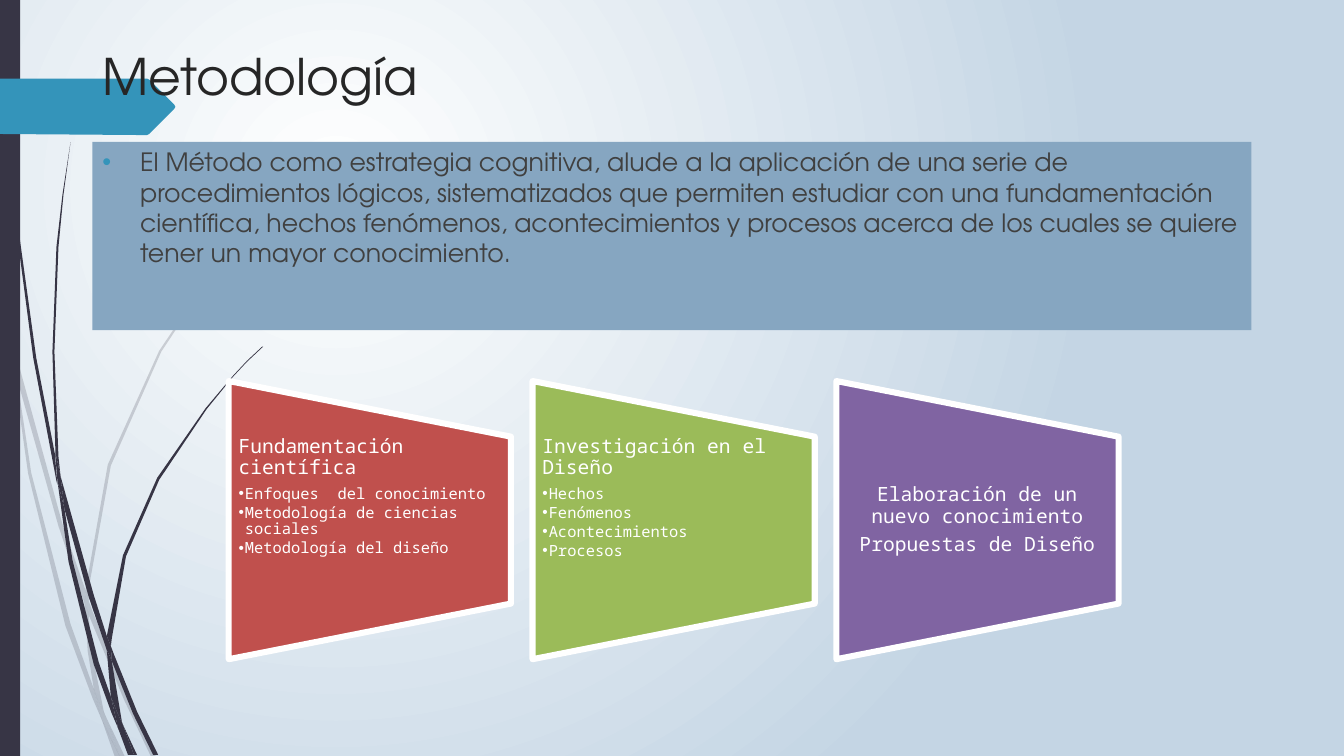
from pptx import Presentation
from pptx.dml.color import RGBColor
from pptx.enum.shapes import MSO_SHAPE
from pptx.enum.text import MSO_ANCHOR, PP_ALIGN
from pptx.oxml import parse_xml
from pptx.oxml.ns import nsdecls, qn
from pptx.oxml.xmlchemy import OxmlElement
from pptx.util import Pt

WHITE = RGBColor(0xFF, 0xFF, 0xFF)
SKY = RGBColor(0xC4, 0xD5, 0xE4)
NIGHT = RGBColor(0x37, 0x35, 0x45)
TEAL = RGBColor(0x34, 0x94, 0xBA)
PANEL = RGBColor(0x86, 0xA6, 0xC1)
TITLE_INK = RGBColor(0x26, 0x26, 0x26)
BODY_INK = RGBColor(0x40, 0x40, 0x40)
RED = RGBColor(0xC0, 0x50, 0x4D)
GREEN = RGBColor(0x9B, 0xBB, 0x59)
PURPLE = RGBColor(0x80, 0x64, 0xA2)

DISPLAY = "TeX Gyre Adventor"
MONO = "Noto Sans Mono"
OUTLINE_UNIT = Pt(0.72)

PALE_BLADES = [
    [(11, 350), (9, 322), (0, 282), (0, 299), (10, 344)],
    [(58, 522), (84, 599), (85, 586), (62, 520), (14, 345), (17, 376)],
    [(92, 607), (88, 596), (88, 610), (123, 694), (150, 751), (155, 751), (127, 692)],
    [(119, 751), (124, 751), (105, 711)],
    [(93, 683), (70, 619), (31, 469), (17, 376), (11, 350), (28, 470), (65, 621), (92, 693), (101, 714), (99, 707)],
    [(84, 599), (87, 646), (93, 683), (96, 692), (105, 711), (103, 706), (91, 646), (88, 610), (88, 608)],
    [(88, 584), (110, 462), (160, 349), (229, 245), (268, 198), (290, 175), (312, 154), (312, 153), (289, 175),
     (268, 197), (228, 244), (158, 348), (107, 461), (85, 584), (85, 586), (88, 596)],
    [(101, 714), (114, 751), (119, 751)],
    [(88, 608), (88, 610), (88, 596), (85, 586), (84, 599)],
    [(96, 692), (93, 683), (99, 707), (101, 714), (119, 751), (105, 711)],
]
DARK_BLADES = [
    [(7, 110), (17, 233), (33, 355), (56, 477), (57, 481), (55, 457), (55, 453), (36, 355), (19, 232), (8, 109),
     (5, 48), (4, 0), (3, 0), (4, 48)],
    [(88, 592), (106, 645), (106, 633), (106, 631), (93, 590), (60, 472), (64, 505)],
    [(113, 649), (110, 641), (111, 656), (132, 708), (152, 749), (157, 749), (136, 706)],
    [(110, 691), (98, 657), (72, 556), (64, 505), (57, 477), (68, 557), (93, 659), (111, 708), (117, 722), (116, 717)],
    [(60, 472), (58, 453), (54, 349), (58, 245), (63, 193), (70, 141), (62, 193), (56, 245), (52, 349), (55, 449)],
    [(133, 749), (136, 749), (122, 719)],
    [(57, 477), (64, 505), (60, 472), (55, 449), (55, 453)],
    [(111, 633), (125, 552), (158, 476), (205, 406), (231, 374), (245, 359), (261, 344), (260, 344), (245, 358),
     (231, 373), (204, 405), (156, 474), (122, 551), (106, 631), (110, 641)],
    [(117, 722), (127, 749), (131, 749)],
    [(106, 645), (110, 691), (116, 706), (122, 719), (121, 716), (111, 656), (109, 651)],
    [(106, 645), (109, 651), (111, 656), (110, 641), (106, 631), (106, 633)],
    [(116, 706), (110, 691), (116, 717), (117, 722), (130, 749), (133, 749), (122, 719)],
]
TAG = [(173, 108), (148, 133), (146, 134), (136, 134), (0, 133), (0, 78), (146, 78), (148, 79), (173, 104), (174, 106)]

DEFINITION = (
    "El Método como estrategia cognitiva, alude a la aplicación de una serie de procedimientos lógicos, "
    "sistematizados que permiten estudiar con una fundamentación científica, hechos fenómenos, "
    "acontecimientos y procesos acerca de los cuales se quiere tener un mayor conocimiento."
)
STAGES = [
    (RED, ["Fundamentación científica"],
     ["Enfoques  del conocimiento", "Metodología de ciencias sociales", "Metodología del diseño"]),
    (GREEN, ["Investigación en el Diseño"], ["Hechos", "Fenómenos", "Acontecimientos", "Procesos"]),
    (PURPLE, ["Elaboración de un nuevo conocimiento", "Propuestas de Diseño"], []),
]


def set_attributes(target, values):
    """Set every attribute named in a dict of format values."""
    for name, value in values.items():
        setattr(target, name, value)


def paint(shape, color, alpha=None):
    """Give a shape a plain fill with no line or shadow."""
    shape.shadow.inherit = False
    shape.fill.solid()
    shape.fill.fore_color.rgb = color
    shape.line.fill.background()
    if alpha:
        element = OxmlElement("a:alpha")
        element.set("val", str(alpha * 1000))
        shape.fill._xPr.find(qn("a:solidFill"))[0].append(element)


def add_background(slide):
    """Fill the slide with a circular gradient."""
    fill = slide.background.fill
    fill.gradient()
    for position, (stop, color) in enumerate(zip(fill.gradient_stops, (WHITE, SKY))):
        stop.color.rgb = color
        stop.position = position
    linear = fill._fill._gradFill.find(qn("a:lin"))
    linear.getparent().replace(linear, parse_xml(
        f'<a:path {nsdecls("a")} path="circle">'
        '<a:fillToRect l="50000" t="50000" r="100000" b="100000"/></a:path>'))


def add_outline(slide, points, color, alpha=None):
    """Draw a closed filled outline."""
    builder = slide.shapes.build_freeform(*points[0], scale=OUTLINE_UNIT)
    builder.add_line_segments(points[1:], close=True)
    paint(builder.convert_to_shape(), color, alpha)


def add_panel(slide, kind, left, top, width, height, color):
    """Add a filled preset shape."""
    shape = slide.shapes.add_shape(kind, Pt(left), Pt(top), Pt(width), Pt(height))
    paint(shape, color)
    return shape


def write_paragraph(paragraph, text, font, color, size, bullet=None, indent=0, bullet_color=None, **spacing):
    """Write one formatted paragraph, with a bullet if one is given."""
    set_attributes(paragraph, {"alignment": PP_ALIGN.LEFT, **spacing})
    if bullet:
        properties = paragraph._p.get_or_add_pPr()
        properties.set("marL", str(Pt(indent)))
        properties.set("indent", str(-Pt(indent)))
        if bullet_color:
            properties.append(parse_xml(
                f'<a:buClr {nsdecls("a")}><a:srgbClr val="{bullet_color}"/></a:buClr>'))
        properties.append(parse_xml(f'<a:buFont {nsdecls("a")} typeface="Arial"/>'))
        properties.append(parse_xml(f'<a:buChar {nsdecls("a")} char="{bullet}"/>'))
    run = paragraph.add_run()
    run.text = text
    set_attributes(run.font, {"name": font, "size": Pt(size)})
    run.font.color.rgb = color


def add_title(slide, text):
    """Move and fill the title placeholder, in front of the decoration."""
    title = slide.shapes.title
    set_attributes(title, {"left": Pt(66), "top": Pt(28.5), "width": Pt(828), "height": Pt(65)})
    title.text_frame.vertical_anchor = MSO_ANCHOR.TOP
    write_paragraph(title.text_frame.paragraphs[0], text, DISPLAY, TITLE_INK, 36)
    title._element.getparent().append(title._element)


def add_definition(slide):
    """Add the panel that defines the method."""
    panel = add_panel(slide, MSO_SHAPE.RECTANGLE, 66, 101.25, 828, 134.5, PANEL)
    set_attributes(panel.text_frame, {"word_wrap": True, "vertical_anchor": MSO_ANCHOR.TOP})
    write_paragraph(panel.text_frame.paragraphs[0], DEFINITION, DISPLAY, BODY_INK, 18, "•", 27, TEAL)


def add_stage(slide, left, color, headings, items):
    """Add a sideways trapezoid with its headings and bullets."""
    width, height, middle = 201.6, 198.7, 371.5
    card = add_panel(slide, MSO_SHAPE.FLOWCHART_MANUAL_OPERATION, left + (width - height) / 2,
                     middle - width / 2, height, width, color)
    card.rotation = 270
    card.line.color.rgb = WHITE
    card.line.width = Pt(4.33)
    frame = slide.shapes.add_textbox(Pt(left), Pt(middle - 59.5), Pt(width), Pt(119)).text_frame
    set_attributes(frame, {
        "word_wrap": True, "margin_top": 0, "margin_bottom": 0,
        "vertical_anchor": MSO_ANCHOR.TOP if items else MSO_ANCHOR.MIDDLE})
    alignment = PP_ALIGN.LEFT if items else PP_ALIGN.CENTER
    lines = [(text, 14, None, 0, 4.9) for text in headings] + [(text, 11, "••", 4.5, 1.65) for text in items]
    for index, (text, size, bullet, indent, after) in enumerate(lines):
        paragraph = frame.add_paragraph() if index else frame.paragraphs[0]
        paragraph.level = 1 if bullet else 0
        write_paragraph(paragraph, text, MONO, WHITE, size, bullet, indent,
                        alignment=alignment, line_spacing=0.9, space_after=Pt(after))


def main():
    """Build the methodology slide."""
    presentation = Presentation()
    set_attributes(presentation, {"slide_width": Pt(960), "slide_height": Pt(540)})
    slide = presentation.slides.add_slide(presentation.slide_layouts[5])
    add_background(slide)
    for blades, alpha in ((PALE_BLADES, 20), (DARK_BLADES, None)):
        for points in blades:
            add_outline(slide, points, NIGHT, alpha)
    add_panel(slide, MSO_SHAPE.RECTANGLE, 0, 0, 14.4, 540, NIGHT)
    add_outline(slide, TAG, TEAL)
    add_title(slide, "Metodología")
    add_definition(slide)
    for index, stage in enumerate(STAGES):
        add_stage(slide, 163.4 + 217 * index, *stage)
    presentation.save("out.pptx")


if __name__ == "__main__":
    main()
